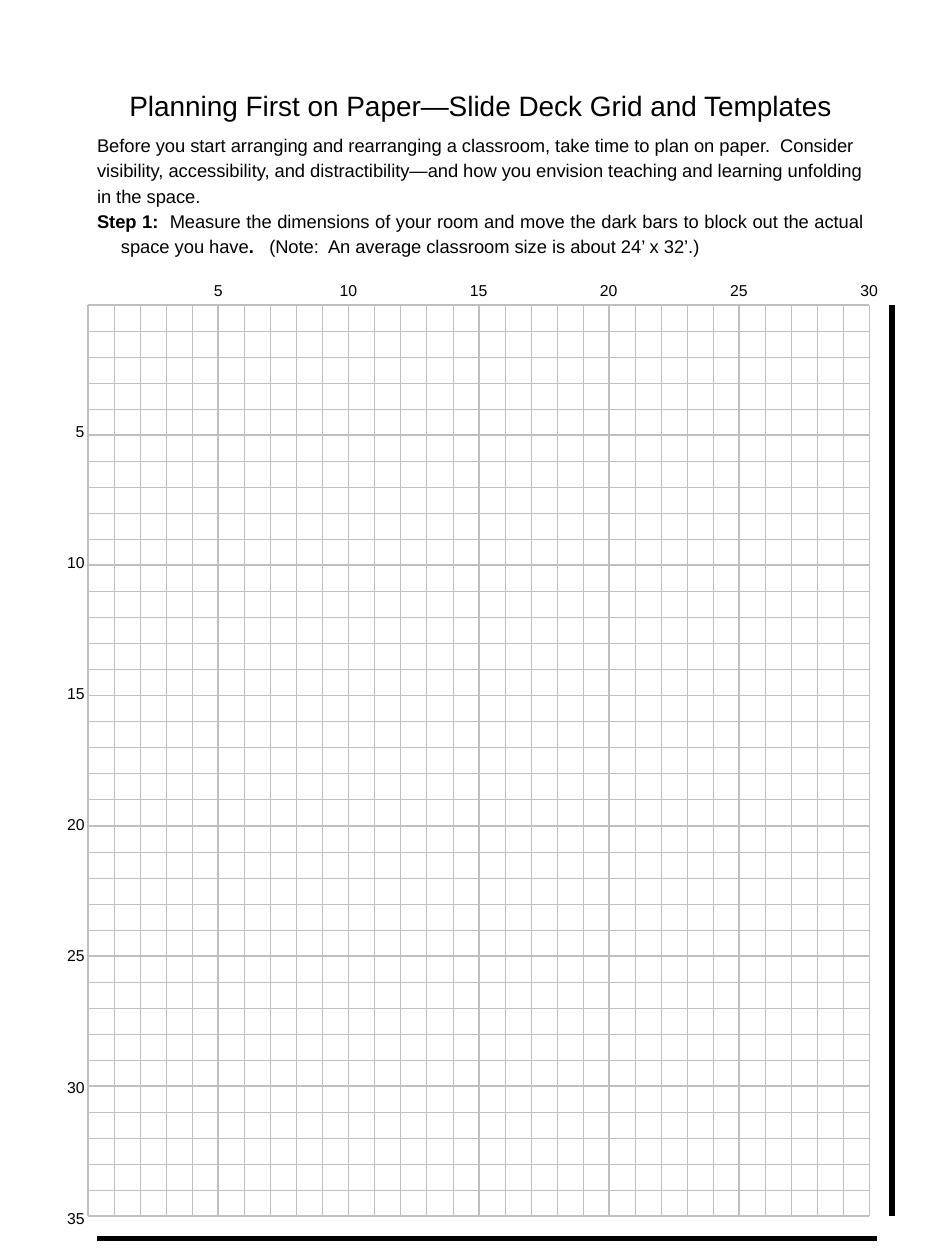
from dataclasses import dataclass
from typing import Any

from lxml.etree import SubElement
from pptx import Presentation
from pptx.dml.color import RGBColor
from pptx.enum.shapes import MSO_CONNECTOR
from pptx.enum.text import MSO_ANCHOR, MSO_AUTO_SIZE, PP_ALIGN
from pptx.oxml.ns import qn
from pptx.util import Inches, Pt

# Grid of one-foot squares, in inches
LEFT, TOP = 0.7, 2.42
COLS, ROWS, STEP = 30, 35, 5
CELL = 6.2 / COLS
RIGHT, BASE = LEFT + COLS * CELL, TOP + ROWS * CELL
GREY, BLACK = "BFBFBF", "000000"
PAD = 0.1
LABEL = 9  # points


@dataclass
class Rule:
    x1: float
    y1: float
    x2: float
    y2: float
    width: float
    color: str = GREY


@dataclass
class Box:
    left: float
    top: float
    width: float
    height: float
    inset: float = 0.05


def paint(color: Any, code: str) -> None:
    color.rgb = RGBColor.from_string(code)


def apply(target: Any, values: dict[str, Any]) -> None:
    for name, value in values.items():
        setattr(target, name, value)


def draw(shapes: Any, rule: Rule) -> None:
    ends = [Inches(v) for v in (rule.x1, rule.y1, rule.x2, rule.y2)]
    line = shapes.add_connector(MSO_CONNECTOR.STRAIGHT, *ends)
    line.line.width = Pt(rule.width)
    paint(line.line.color, rule.color)
    SubElement(line._element.spPr, qn("a:effectLst"))


def place(shape: Any, box: Box) -> Any:
    apply(shape, dict(left=Inches(box.left), top=Inches(box.top),
                      width=Inches(box.width), height=Inches(box.height)))
    frame = shape.text_frame
    apply(frame, dict(word_wrap=True, auto_size=MSO_AUTO_SIZE.NONE,
                      vertical_anchor=MSO_ANCHOR.TOP,
                      margin_left=Inches(PAD), margin_right=Inches(PAD),
                      margin_top=Inches(box.inset), margin_bottom=0))
    return frame


def write(para: Any, runs: list[tuple[str, bool]], size: float, **look: Any) -> None:
    apply(para, dict(space_before=Pt(0), space_after=Pt(0)) | look)
    for text, bold in runs:
        run = para.add_run()
        run.text = text
        apply(run.font, dict(name="Arial", size=Pt(size), bold=bold))
        paint(run.font.color, BLACK)


def plain(para: Any, indent: float) -> None:
    """Remove the bullet and set a hanging indent."""
    props = para._p.get_or_add_pPr()
    props.set("marL", str(Inches(indent)))
    props.set("indent", str(-Inches(indent)))
    SubElement(props, qn("a:buNone"))


def weight(index: int) -> float:
    return 0.25 if index % STEP else 1


def main() -> None:
    deck = Presentation()
    deck.slide_width, deck.slide_height = Inches(7.5), Inches(10)
    slide = deck.slides.add_slide(deck.slide_layouts[1])
    shapes = slide.shapes

    # Title and instructions
    frame = place(shapes.title, Box(0.67, 0.61, 6.29, 0.43))
    write(frame.paragraphs[0],
          [("Planning First on Paper—Slide Deck Grid and Templates", False)],
          16, alignment=PP_ALIGN.CENTER, line_spacing=1.15)

    intro = ("Before you start arranging and rearranging a classroom, take time "
             "to plan on paper.  Consider visibility, accessibility, and "
             "distractibility—and how you envision teaching and learning "
             "unfolding in the space.")
    first = [("Step 1:  ", True),
             ("Measure the dimensions of your room and move the dark bars to "
              "block out the actual space you have", False),
             (".   ", True),
             ("(Note:  An average classroom size is about 24’ x 32’.)", False)]
    frame = place(slide.placeholders[1], Box(0.67, 1.04, 6.29, 1.01, 0))
    parts = [([(intro, False)], 0, PP_ALIGN.LEFT),
             (first, 0.19, PP_ALIGN.JUSTIFY)]
    for i, (runs, indent, align) in enumerate(parts):
        para = frame.add_paragraph() if i else frame.paragraphs[0]
        plain(para, indent)
        write(para, runs, 10.5, alignment=align, line_spacing=1.15)

    # Row labels: one paragraph for every fifth line
    box = Box(0.41, 3.3, 0.36, 6.67)
    frame = place(shapes.add_textbox(0, 0, 0, 0), box)
    gap = Pt(round(STEP * CELL * 72 - LABEL * 1.15, 2))
    for i, foot in enumerate(range(STEP, ROWS + 1, STEP)):
        para = frame.add_paragraph() if i else frame.paragraphs[0]
        write(para, [(str(foot), False)], LABEL,
              alignment=PP_ALIGN.RIGHT, space_after=gap)

    # Column labels: centred tab stops over every fifth line
    box = Box(0.43, 2.18, 6.87, 0.25)
    frame = place(shapes.add_textbox(0, 0, 0, 0), box)
    para = frame.paragraphs[0]
    feet = range(STEP, COLS + 1, STEP)
    tabs = SubElement(para._p.get_or_add_pPr(), qn("a:tabLst"))
    for foot in feet:
        spot = Inches(LEFT + foot * CELL - box.left - PAD)
        SubElement(tabs, qn("a:tab"), pos=str(spot), algn="ctr")
    write(para, [("".join(f"\t{foot}" for foot in feet), False)], LABEL)

    # Grid
    grid = shapes.add_group_shape().shapes
    for i in range(COLS + 1):
        x = LEFT + i * CELL
        draw(grid, Rule(x, TOP, x, BASE, weight(i)))
    for i in range(ROWS + 1):
        y = TOP + i * CELL
        draw(grid, Rule(RIGHT, y, LEFT, y, weight(i)))

    # Dark bars that block out the room
    draw(shapes, Rule(7.08, TOP, 7.08, BASE, 3, BLACK))
    draw(shapes, Rule(6.96, 9.83, 0.77, 9.83, 3, BLACK))

    deck.save("out.pptx")


if __name__ == "__main__":
    main()
